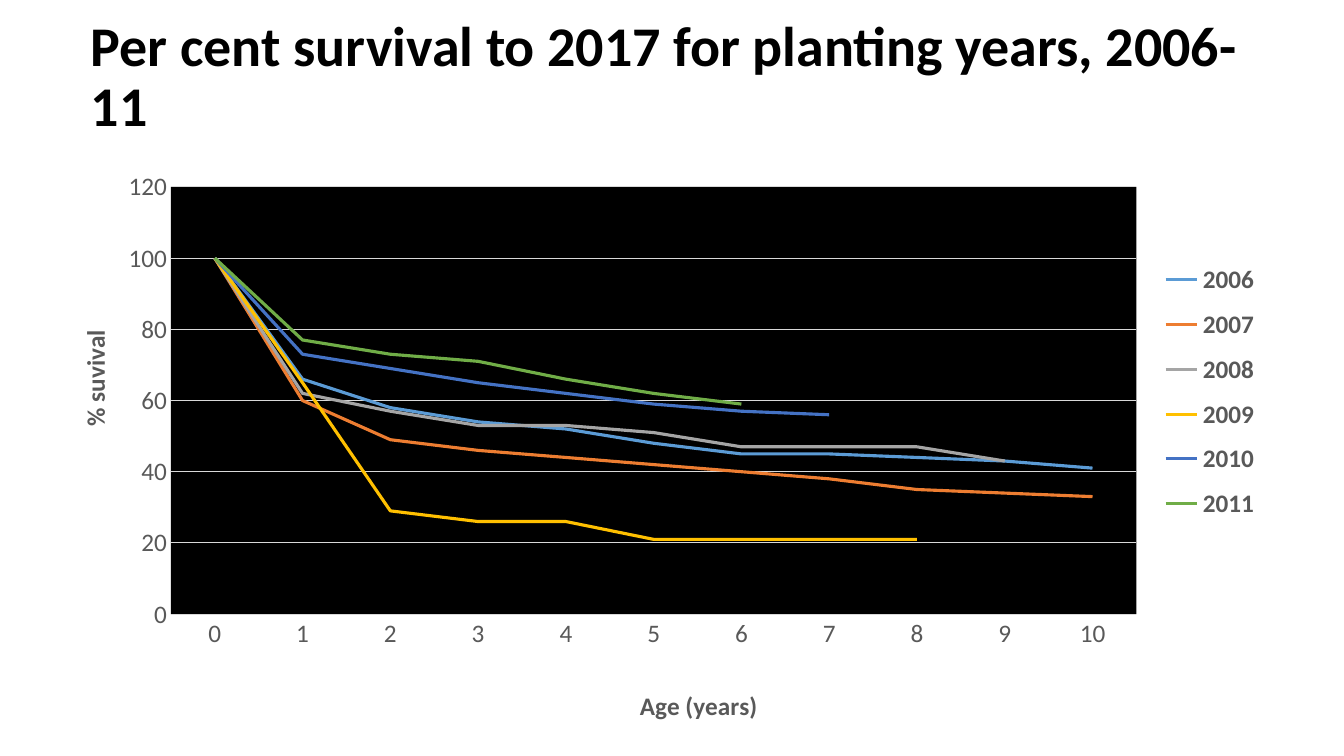
from lxml import etree
from pptx import Presentation
from pptx import util as u
from pptx.chart import data as chart_data
from pptx.dml.color import RGBColor
from pptx.enum import chart as charts, text
from pptx.oxml import parse_xml
from pptx.oxml.ns import nsdecls, qn

PX = 9525
FONT = "Calibri"
COLORS = {
    "ink": "000000", "label": "595959", "grid": "D9D9D9",
    "2006": "5B9BD5", "2007": "ED7D31", "2008": "A5A5A5",
    "2009": "FFC000", "2010": "4472C4", "2011": "70AD47",
}
SURVIVAL = {
    "2006": [100, 66, 58, 54, 52, 48, 45, 45, 44, 43, 41],
    "2007": [100, 60, 49, 46, 44, 42, 40, 38, 35, 34, 33],
    "2008": [100, 62, 57, 53, 53, 51, 47, 47, 47, 43],
    "2009": [100, 65, 29, 26, 26, 21, 21, 21, 21],
    "2010": [100, 73, 69, 65, 62, 59, 57, 56],
    "2011": [100, 77, 73, 71, 66, 62, 59],
}
AGES = range(11)


def color(name):
    return RGBColor.from_string(COLORS[name])


def style_font(font, size, name, bold=False):
    font.name = FONT
    font.size = u.Pt(size)
    font.bold = bold
    font.color.rgb = color(name)


def style_line(line, name, width):
    line.color.rgb = color(name)
    line.width = u.Pt(width)


def place(element, index, left, top, width=None, height=None, inner=False):
    for old in element.findall(qn("c:layout")):
        element.remove(old)
    layout = parse_xml(f"<c:layout {nsdecls('c')}><c:manualLayout/></c:layout>")
    fields = [("layoutTarget", "inner")] if inner else []
    fields += [("xMode", "edge"), ("yMode", "edge"), ("x", left), ("y", top)]
    if width:
        fields += [("w", width), ("h", height)]
    for tag, value in fields:
        etree.SubElement(layout[0], qn(f"c:{tag}")).set("val", str(value))
    element.insert(index, layout)


def add_title(page, box, words):
    title = page.shapes.title
    title.left, title.top, title.width, title.height = (PX * n for n in box)
    frame = title.text_frame
    frame.word_wrap = True
    frame.auto_size = text.MSO_AUTO_SIZE.NONE
    frame.vertical_anchor = text.MSO_ANCHOR.MIDDLE
    para = frame.paragraphs[0]
    para.alignment = text.PP_ALIGN.LEFT
    para.line_spacing = 0.9
    span = para.add_run()
    span.text = words
    style_font(span.font, 40, "ink", True)


def style_axis(axis, words, left, top, rotation):
    axis.major_tick_mark = axis.minor_tick_mark = charts.XL_TICK_MARK.NONE
    style_font(axis.tick_labels.font, 18, "label")
    frame = axis.axis_title.text_frame
    span = frame.paragraphs[0].add_run()
    span.text = words
    style_font(span.font, 18, "label", True)
    body = frame._txBody.bodyPr
    body.set("rot", str(rotation))
    body.set("vert", "horz")
    place(axis.axis_title._element, 1, left, top)


def add_survival_chart(page, box):
    data = chart_data.CategoryChartData()
    data.categories = [str(age) for age in AGES]
    for year, values in SURVIVAL.items():
        data.add_series(year, values + [None] * (len(AGES) - len(values)))
    chart = page.shapes.add_chart(
        charts.XL_CHART_TYPE.LINE, *(PX * n for n in box), data).chart
    chart.has_title = False
    style_font(chart.font, 10, "ink")

    for series in chart.plots[0].series:
        series.smooth = False
        style_line(series.format.line, series.name, 2.25)
    chart.plots[0].vary_by_categories = False

    style_axis(chart.category_axis, "Age (years)", 0.47, 0.9, 0)
    style_line(chart.category_axis.format.line, "grid", 0.75)
    values = chart.value_axis
    style_axis(values, "% suvival", 0.01, 0.28, -5400000)
    values.minimum_scale, values.maximum_scale, values.major_unit = 0, 120, 20
    values.format.line.fill.background()
    style_line(values.major_gridlines.format.line, "grid", 0.75)

    chart.has_legend = True
    legend = chart.legend
    legend.position = charts.XL_LEGEND_POSITION.RIGHT
    legend.include_in_layout = False
    style_font(legend.font, 18, "label", True)
    place(legend._element, 1, 0.89, 0.15, 0.1, 0.49)

    area = chart._chartSpace.chart.plotArea
    place(area, 0, 0.09, 0.04, 0.79, 0.74, inner=True)
    area.append(parse_xml(
        f"<c:spPr {nsdecls('c', 'a')}><a:solidFill>"
        f'<a:srgbClr val="{COLORS["ink"]}"/></a:solidFill></c:spPr>'))


def main():
    deck = Presentation()
    deck.slide_width, deck.slide_height = 1280 * PX, 720 * PX
    page = deck.slides.add_slide(deck.slide_layouts[5])
    add_title(page, (77, 7, 1125, 135),
              "Per cent survival to 2017 for planting years, 2006-11")
    add_survival_chart(page, (58, 156, 1164, 550))
    deck.save("out.pptx")


if __name__ == "__main__":
    main()
